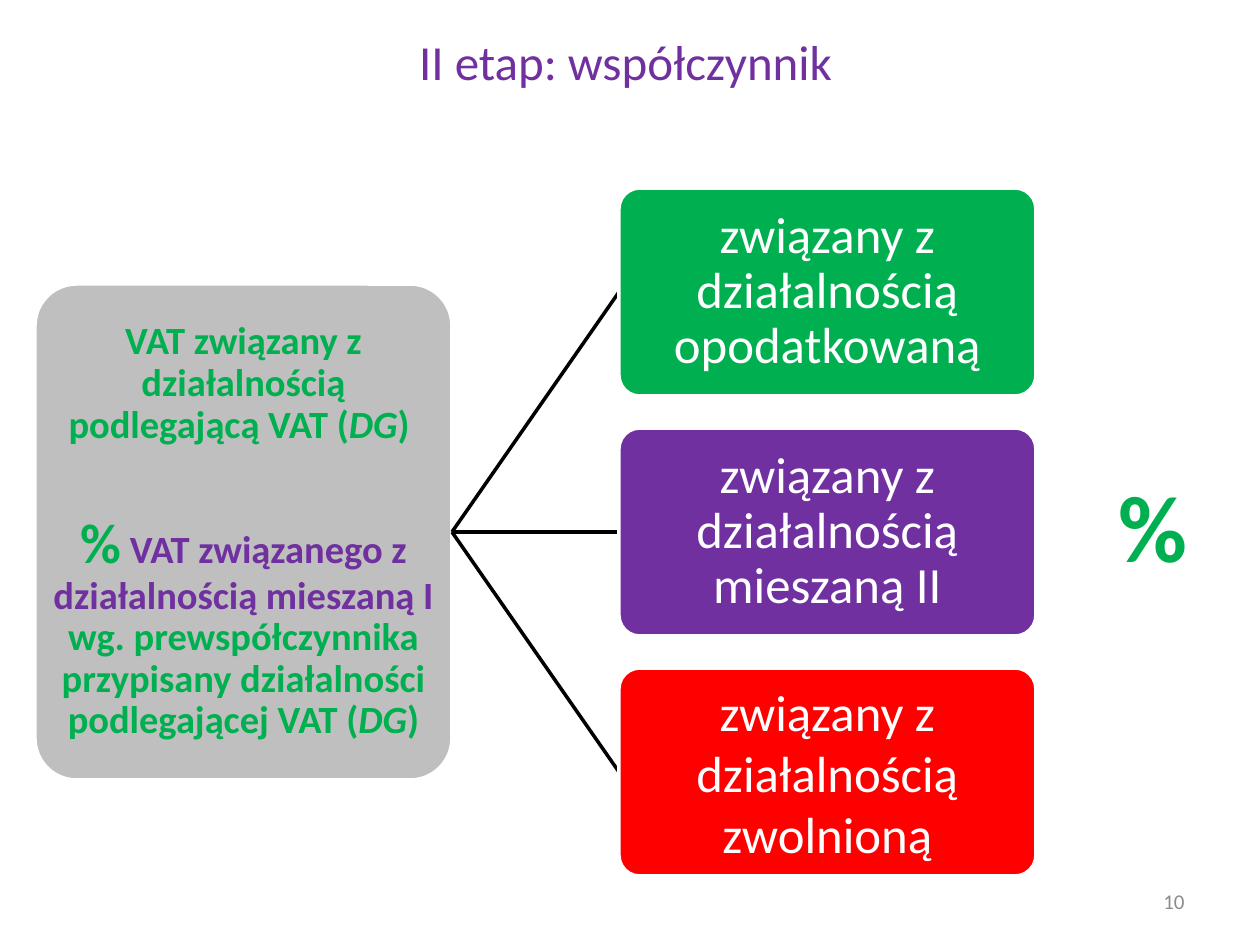
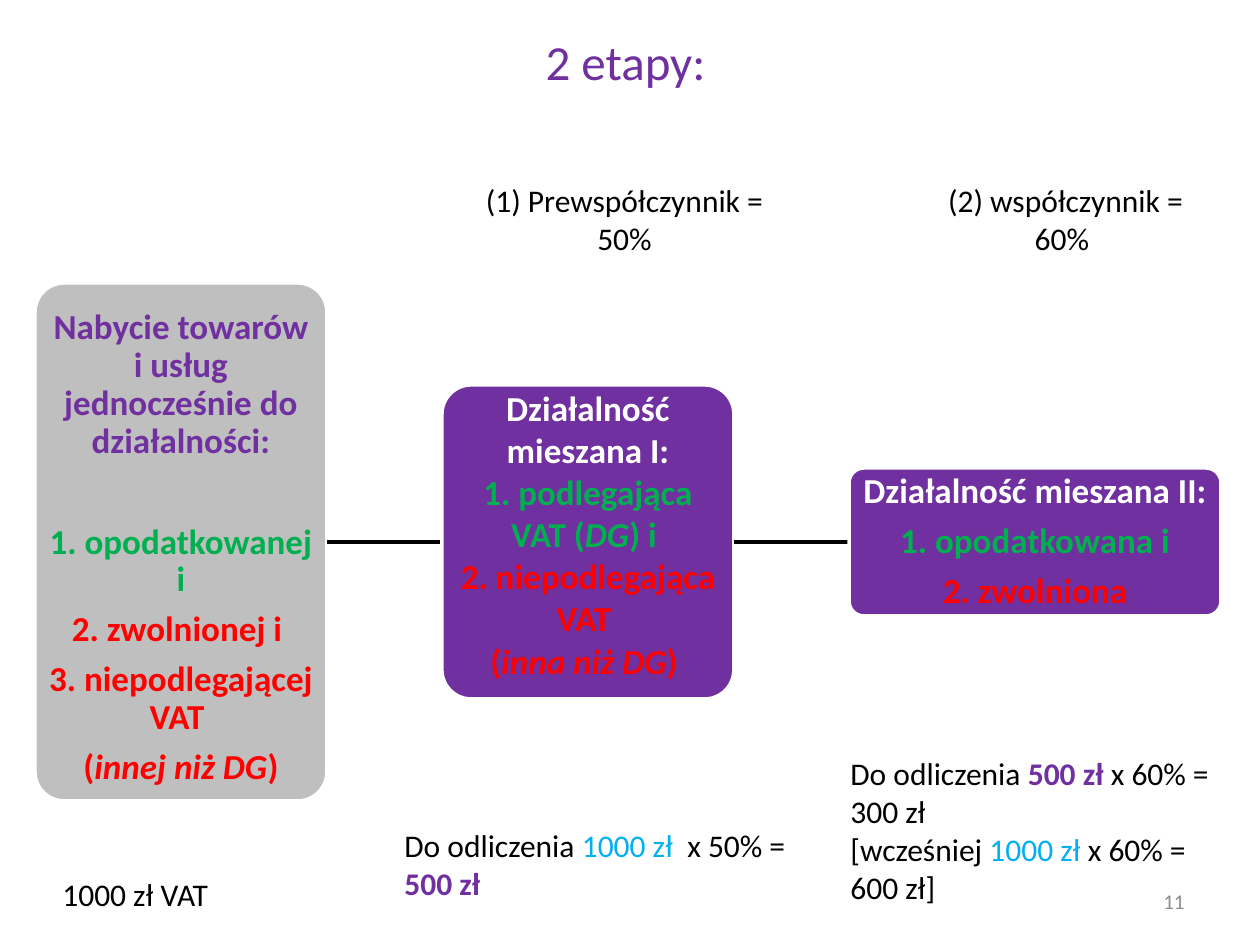
"""Two slides on splitting input VAT by activity in two stages."""
from dataclasses import dataclass

from lxml import etree
from pptx import Presentation
from pptx.dml.color import RGBColor
from pptx.enum.shapes import MSO_CONNECTOR, MSO_SHAPE
from pptx.enum.text import MSO_ANCHOR, PP_ALIGN
from pptx.oxml.ns import qn
from pptx.util import Emu, Pt

ROUNDED = MSO_SHAPE.ROUNDED_RECTANGLE
STRAIGHT = MSO_CONNECTOR.STRAIGHT
MIDDLE, TOP = MSO_ANCHOR.MIDDLE, MSO_ANCHOR.TOP
LEFT, CENTER, RIGHT = PP_ALIGN.LEFT, PP_ALIGN.CENTER, PP_ALIGN.RIGHT
LEFT_SIDE, RIGHT_SIDE = 1, 3
PX = 914400 / 126
TITLE_ONLY = 5


@dataclass(frozen=True)
class Theme:
    font: str = "Calibri"
    purple: str = "7030A0"
    green: str = "00B050"
    red: str = "FF0000"
    blue: str = "00B0F0"
    gray: str = "BFBFBF"
    muted: str = "8C8C8C"
    black: str = "000000"
    white: str = "FFFFFF"
    title: int = 28
    branch: int = 29
    source: int = 22
    stage: int = 20
    note: int = 18
    number: int = 12
    sign: int = 32
    big_sign: int = 54
    line: int = 2
    tight: float = 0.9
    after: float = 0.35


T = Theme()


def px(n):
    return Emu(round(n * PX))


class Deck:
    def __init__(self):
        self.prs = Presentation()
        self.prs.slide_width, self.prs.slide_height = px(1260), px(945)
        self.s = None

    def slide(self, title, number):
        self.s = self.prs.slides.add_slide(self.prs.slide_layouts[TITLE_ONLY])
        sp = self.s.shapes.title
        sp.left, sp.top, sp.width, sp.height = map(px, (144, 16, 963, 89))
        self.fill_text(sp.text_frame, [[(title, T.purple)]], T.title, CENTER)
        self.text(903, 876, 294, 50, [[(number, T.muted)]], T.number, RIGHT, MIDDLE)

    def fill_text(self, tf, paras, size, align, anchor=MIDDLE, spacing=None, gaps=()):
        """Fill a frame; a run is (text, colour, style letters, size), gaps maps a paragraph to its space after."""
        tf.word_wrap, tf.vertical_anchor = True, anchor
        for n, runs in enumerate(paras):
            p = tf.add_paragraph() if n else tf.paragraphs[0]
            p.alignment = align
            if spacing:
                p.line_spacing = spacing
                p.space_after = Pt(size * T.after)
            if n in gaps:
                p.space_after = Pt(gaps[n])
            for text, color, *rest in runs:
                style = rest[0] if rest else ""
                r = p.add_run()
                r.text = text
                r.font.name = T.font
                r.font.size = Pt(rest[1] if len(rest) > 1 else size)
                r.font.color.rgb = RGBColor.from_string(color)
                r.font.bold, r.font.italic = "b" in style, "i" in style

    def text(self, x, y, w, h, paras, size=T.note, align=LEFT, anchor=TOP):
        sp = self.s.shapes.add_textbox(*map(px, (x, y, w, h)))
        self.fill_text(sp.text_frame, paras, size, align, anchor)

    def box(self, x, mid, w, h, fill, paras, size, spacing=T.tight, gaps=(), top=2, bottom=2):
        """Add a rounded box centred on the height mid."""
        sp = self.s.shapes.add_shape(ROUNDED, *map(px, (x, mid - h / 2, w, h)))
        sp.adjustments[0] = 0.1
        sp.shadow.inherit = False
        sp.fill.solid()
        sp.fill.fore_color.rgb = RGBColor.from_string(fill)
        sp.line.color.rgb = RGBColor.from_string(T.white)
        sp.line.width = Pt(T.line)
        tf = sp.text_frame
        tf.margin_left = tf.margin_right = px(2)
        tf.margin_top, tf.margin_bottom = px(top), px(bottom)
        self.fill_text(tf, paras, size, CENTER, MIDDLE, spacing, gaps)
        return sp

    def link(self, a, b):
        """Join the right side of a to the left side of b, just behind b."""
        c = self.s.shapes.add_connector(STRAIGHT, 0, 0, 0, 0)
        c.begin_connect(a, RIGHT_SIDE)
        c.end_connect(b, LEFT_SIDE)
        c.line.color.rgb = RGBColor.from_string(T.black)
        c.line.width = Pt(T.line)
        etree.SubElement(c.element.spPr, qn("a:effectLst"))
        b.element.addprevious(c.element)


def ratio_slide(d):
    d.slide("II etap: współczynnik", "10")
    mid, pitch = 532, 240
    source = d.box(35, mid, 417, 496, T.gray, [
        [("VAT związany z działalnością podlegającą VAT (", T.green, "b"),
         ("DG", T.green, "bi"), (") ", T.green, "b")],
        [("%", T.green, "b", T.sign),
         (" VAT związanego z działalnością mieszaną I ", T.purple, "b"),
         ("wg. prewspółczynnika przypisany działalności podlegającej VAT (", T.green, "b"),
         ("DG", T.green, "bi"), (")", T.green, "b")],
    ], T.source, gaps={0: 39.5})
    branches = [("opodatkowaną", T.green, T.tight),
                ("mieszaną II", T.purple, T.tight),
                ("zwolnioną", T.red, None)]
    for n, (kind, fill, spacing) in enumerate(branches):
        branch = d.box(619, mid + (n - 1) * pitch, 417, 208, fill,
                       [[(f"związany z działalnością {kind}", T.white)]], T.branch, spacing)
        d.link(source, branch)
    d.text(1106, 462, 118, 127, [[("%", T.green, "b")]], T.big_sign)


def stages_slide(d):
    d.slide("2 etapy:", "11")
    mid, left, pitch = 542, 35, 407
    purchase = d.box(left, mid, 292, 518, T.gray, [
        [("Nabycie towarów i usług jednocześnie do działalności:", T.purple, "b")],
        [("1. opodatkowanej i", T.green, "b")],
        [("2. zwolnionej i ", T.red, "b")],
        [("3. niepodlegającej VAT ", T.red, "b")],
        [("(", T.red, "b"), ("innej niż DG", T.red, "bi"), (")", T.red, "b")],
    ], T.stage, gaps={0: 36}, top=15)
    mixed_1 = d.box(left + pitch, mid, 292, 314, T.purple, [
        [("Działalność mieszana I:", T.white, "b")],
        [("1. podlegająca VAT (", T.green, "b"), ("DG", T.green, "bi"), (") i ", T.green, "b")],
        [("2. niepodlegająca VAT ", T.red, "b")],
        [("(", T.red, "b"), ("inna niż DG", T.red, "bi"), (") ", T.red, "b")],
    ], T.stage, None, bottom=18)
    mixed_2 = d.box(left + 2 * pitch, mid, 372, 148, T.purple, [
        [("Działalność mieszana II:", T.white, "b")],
        [("1. opodatkowana i", T.green, "b")],
        [("2. zwolniona", T.red, "b")],
    ], T.stage)
    d.link(purchase, mixed_1)
    d.link(mixed_1, mixed_2)

    d.text(471, 175, 307, 89, [[("(1) Prewspółczynnik = 50%", T.black)]], align=CENTER)
    d.text(898, 175, 328, 89, [[(" (2) współczynnik = 60%", T.black)]], align=CENTER)
    d.text(50, 869, 282, 50, [[("1000 zł VAT", T.black)]])
    d.text(392, 820, 446, 89, [
        [("Do odliczenia ", T.black), ("1000 zł  ", T.blue),
         ("x 50% = ", T.black), ("500 zł", T.purple, "b")],
    ])
    d.text(838, 748, 387, 165, [
        [("Do odliczenia ", T.black), ("500 zł ", T.purple, "b"), ("x 60% =", T.black)],
        [("300 zł", T.black)],
        [("[wcześniej ", T.black), ("1000 zł ", T.blue), ("x 60% = 600 zł]", T.black)],
    ])


def main():
    d = Deck()
    ratio_slide(d)
    stages_slide(d)
    d.prs.save("out.pptx")


if __name__ == "__main__":
    main()
